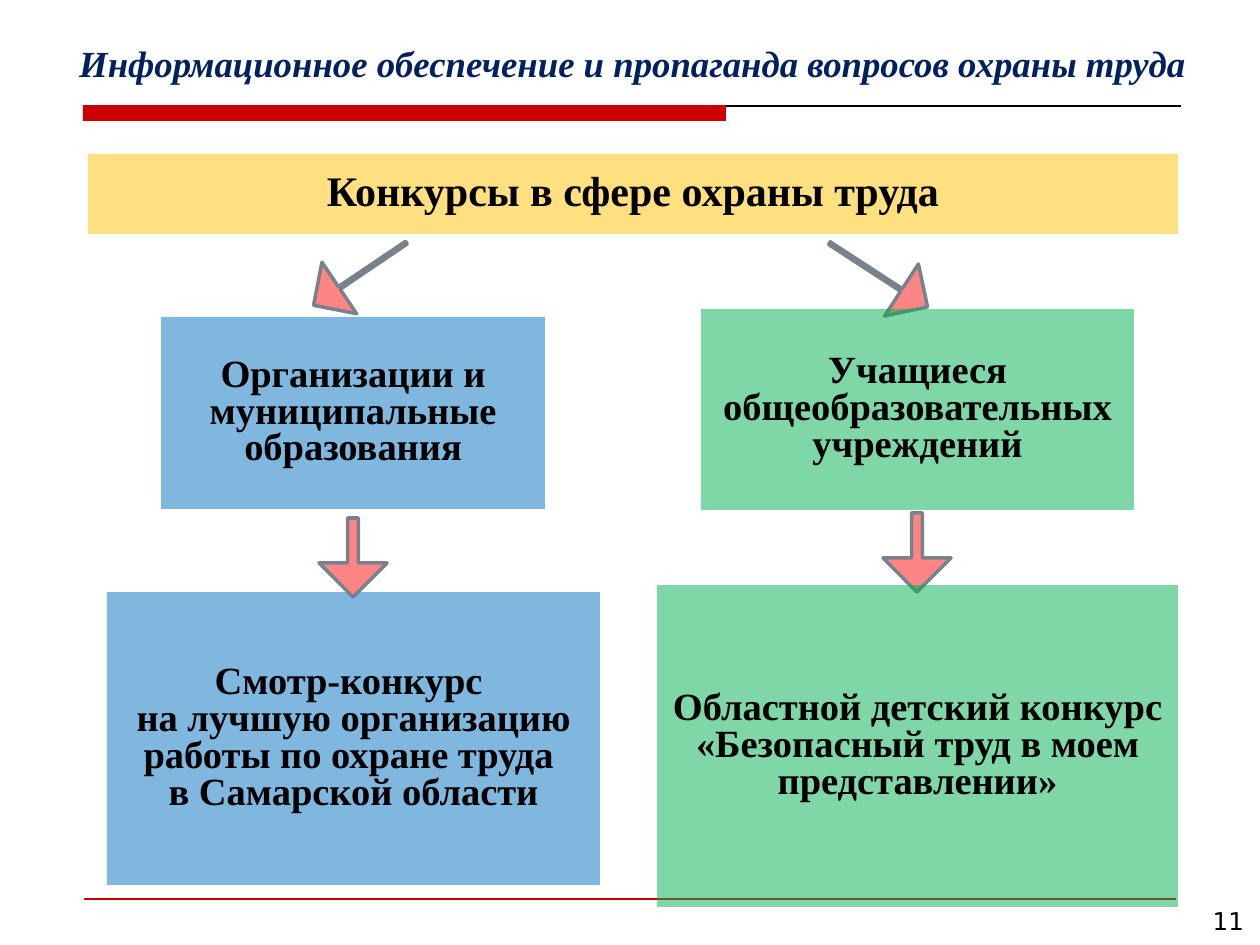
from lxml import etree
from pptx import Presentation
from pptx.dml.color import RGBColor
from pptx.enum.shapes import MSO_CONNECTOR, MSO_SHAPE
from pptx.enum.text import MSO_ANCHOR, MSO_AUTO_SIZE, PP_ALIGN
from pptx.oxml.ns import qn
from pptx.util import Pt

RECTANGLE = MSO_SHAPE.RECTANGLE
DOWN_ARROW = MSO_SHAPE.DOWN_ARROW
LEFT_ARROW = MSO_SHAPE.LEFT_ARROW
STRAIGHT = MSO_CONNECTOR.STRAIGHT
CENTER, RIGHT = PP_ALIGN.CENTER, PP_ALIGN.RIGHT
TOP, MIDDLE, BOTTOM = MSO_ANCHOR.TOP, MSO_ANCHOR.MIDDLE, MSO_ANCHOR.BOTTOM
NO_AUTOFIT = MSO_AUTO_SIZE.NONE

EMU_PER_PX = 914400 / 126
COLORS = {
    "navy": "002060",
    "black": "000000",
    "red": "CC0000",
    "yellow": "FFC000",
    "blue": "0070C0",
    "green": "00B050",
    "pink": "FF8585",
    "gray": "77828D",
}
SERIF = "Times New Roman"
SANS = "DejaVu Sans"


def px(value):
    return round(value * EMU_PER_PX)


def color(name):
    return RGBColor.from_string(COLORS[name])


class SlideBuilder:
    def __init__(self, deck):
        self.page = deck.slides.add_slide(deck.slide_layouts[5])
        self.shapes = self.page.shapes

    def fill_text(self, shape, text, size, anchor=MIDDLE, align=CENTER,
                  font=SERIF, ink="black", spacing=1.0, **style):
        frame = shape.text_frame
        frame_format = {
            "word_wrap": True, "auto_size": NO_AUTOFIT, "vertical_anchor": anchor,
            "margin_left": px(13), "margin_right": px(13),
            "margin_top": px(6), "margin_bottom": px(6),
        }
        for name, value in frame_format.items():
            setattr(frame, name, value)
        para = frame.paragraphs[0]
        para.text = text
        para.alignment = align
        para.line_spacing = spacing
        for span in para.runs:
            for name, value in {"name": font, "size": Pt(size), **style}.items():
                setattr(span.font, name, value)
            span.font.color.rgb = color(ink)

    def title(self, text, *place):
        box = self.shapes.title
        for name, value in zip(("left", "top", "width", "height"), place):
            setattr(box, name, px(value))
        self.fill_text(box, text, 21, BOTTOM, ink="navy", bold=True, italic=True)

    def page_number(self, text, *place):
        box = self.shapes.add_textbox(*map(px, place))
        self.fill_text(box, text, 14, TOP, RIGHT, SANS)

    def preset(self, kind, fill, *place):
        shape = self.shapes.add_shape(kind, *map(px, place))
        shape.shadow.inherit = False
        shape.fill.solid()
        shape.fill.fore_color.rgb = color(fill)
        return shape

    def bar(self, fill, *place):
        bar = self.preset(RECTANGLE, fill, *place)
        bar.line.fill.background()
        return bar

    def panel(self, text, fill, size, *place):
        panel = self.bar(fill, *place)
        tint = panel.element.spPr.find(".//" + qn("a:srgbClr"))
        etree.SubElement(tint, qn("a:alpha")).set("val", "50000")
        self.fill_text(panel, text, size, spacing=0.8, bold=True)

    def arrow(self, kind, shaft, rotation, *place):
        arrow = self.preset(kind, "pink", *place)
        arrow.rotation = rotation
        arrow.line.color.rgb = color("gray")
        arrow.line.width = Pt(2)
        arrow.adjustments[0] = shaft
        arrow.adjustments[1] = 0.5

    def rule(self, ink, width, *ends):
        rule = self.shapes.add_connector(STRAIGHT, *map(px, ends))
        rule.line.color.rgb = color(ink)
        rule.line.width = Pt(width)
        etree.SubElement(rule.element.spPr, qn("a:effectLst"))


def main():
    deck = Presentation()
    deck.slide_width, deck.slide_height = px(1260), px(945)
    slide = SlideBuilder(deck)

    slide.rule("black", 0.75, 84, 106, 1181, 106)
    slide.bar("red", 83, 105, 643, 16)
    slide.rule("red", 0.75, 84, 899, 1176, 899)
    slide.title("Информационное обеспечение и пропаганда вопросов охраны труда",
                34, 16, 1197, 75)
    slide.page_number("11", 984, 900, 273, 66)

    slide.panel("Организации и муниципальные образования", "blue", 22,
                161, 317, 384, 192)
    slide.panel("Смотр-конкурс \vна лучшую организацию работы по охране труда \v"
                "в Самарской области", "blue", 22, 107, 592, 493, 293)
    slide.panel("Конкурсы в сфере охраны труда", "yellow", 24, 88, 154, 1090, 80)

    slide.arrow(DOWN_ARROW, 0.16, 0, 319, 518, 68, 79)
    slide.arrow(LEFT_ARROW, 0.05, 326, 304, 243, 112, 62)
    slide.arrow(LEFT_ARROW, 0.05, 213, 820, 244, 117, 62)
    slide.arrow(DOWN_ARROW, 0.16, 0, 883, 513, 68, 79)

    slide.panel("Областной детский конкурс «Безопасный труд в моем представлении»",
                "green", 22, 657, 585, 521, 322)
    slide.panel("Учащиеся общеобразовательных учреждений", "green", 22,
                701, 309, 433, 201)
    deck.save("out.pptx")


if __name__ == "__main__":
    main()
